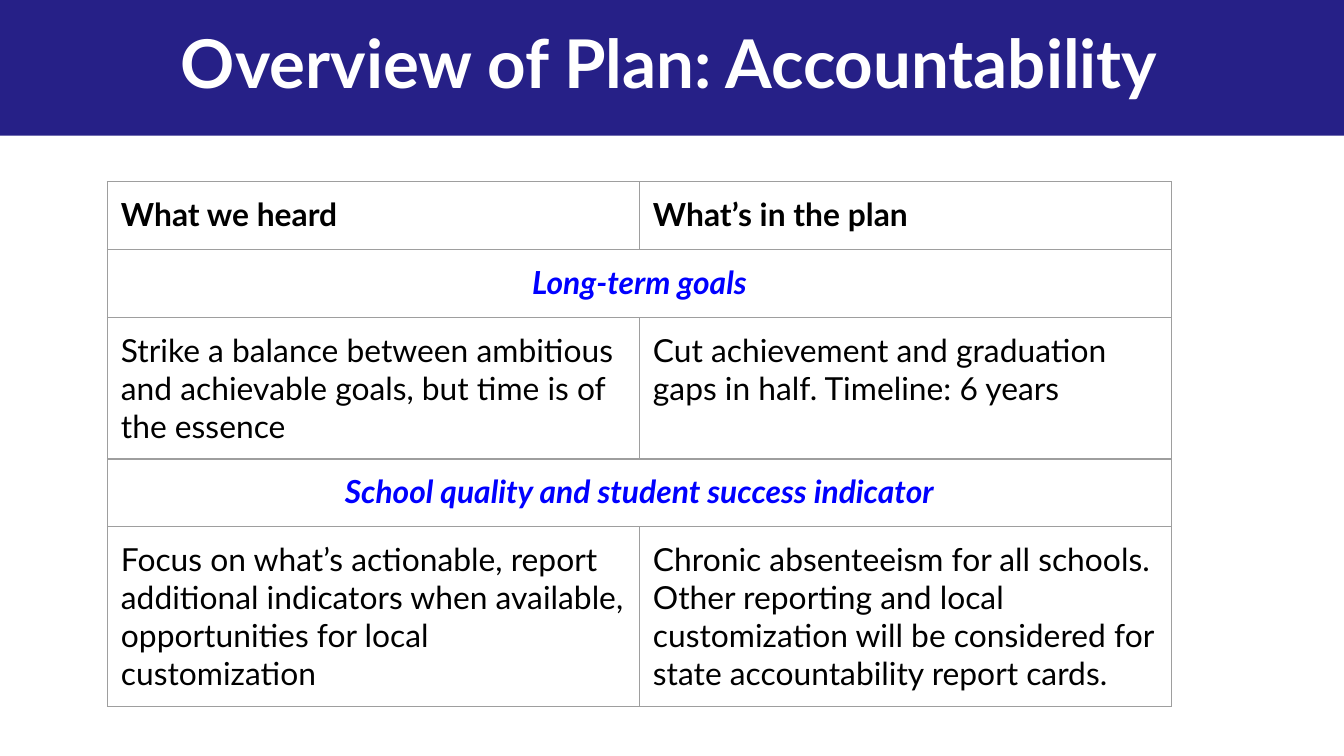
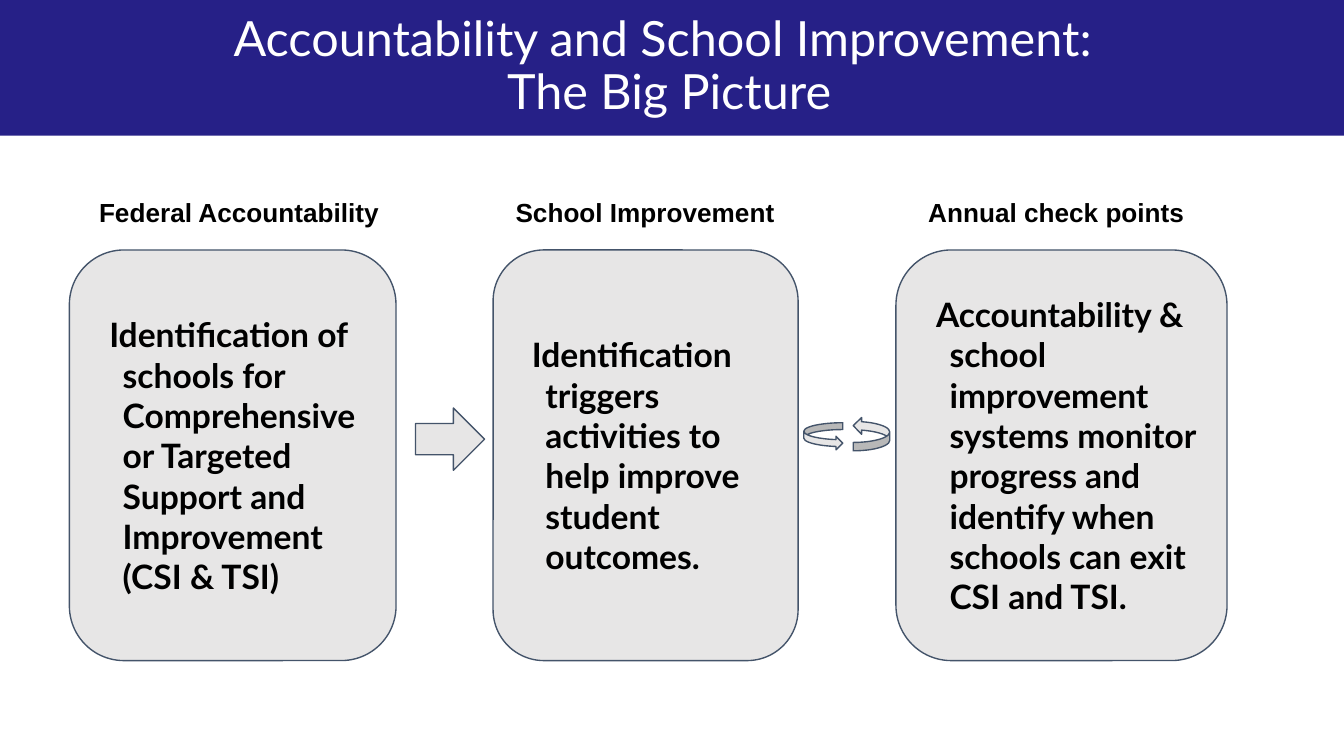
from dataclasses import dataclass

from lxml import etree
from pptx import Presentation
from pptx.dml.color import RGBColor
from pptx.enum.shapes import MSO_SHAPE
from pptx.enum.text import MSO_ANCHOR, PP_ALIGN
from pptx.oxml.ns import qn
from pptx.util import Pt

LEFT, MID = PP_ALIGN.LEFT, PP_ALIGN.CENTER
TOP, CORE = MSO_ANCHOR.TOP, MSO_ANCHOR.MIDDLE
RECT, ROUND = MSO_SHAPE.RECTANGLE, MSO_SHAPE.ROUNDED_RECTANGLE
RIGHT = MSO_SHAPE.RIGHT_ARROW
CURVE, BEND = MSO_SHAPE.CURVED_RIGHT_ARROW, MSO_SHAPE.CURVED_UP_ARROW
SIDES = ("left", "top", "right", "bottom")


@dataclass(frozen=True)
class Theme:
    band: str = "262087"
    white: str = "FFFFFF"
    ink: str = "000000"
    blue: str = "0000FF"
    grey: str = "E7E6E6"
    edge: str = "44546A"
    grid: str = "9E9E9E"
    face: str = "Lato"
    plain: str = "Arial"
    head: float = 36
    sub: float = 26
    card: float = 18
    cell: float = 17
    label: float = 14
    pad: float = 7.2
    rule: float = 0.75


def apply(item, vals):
    for key, val in vals.items():
        setattr(item, key, val)


class Deck:
    """Holds the theme and the current slide, and draws each kind of element."""

    def __init__(self, theme):
        self.theme = theme
        self.prs = Presentation()
        apply(self.prs, {"slide_width": Pt(720), "slide_height": Pt(405)})

    def start(self, lines, size, bold):
        self.slide = self.prs.slides.add_slide(self.prs.slide_layouts[6])
        self.shape(RECT, (-0.72, 0, 720.72, 72.72), self.theme.band)
        self.text((48.24, 0, 620.64, 72), lines, size, self.theme.white,
                  anchor=CORE, bold=bold, gap=0.9)

    def fill(self, frame, lines, size, color, face=None, align=MID,
             bold=True, italic=False, gap=None, hang=None):
        apply(frame, {f"margin_{side}": Pt(self.theme.pad) for side in SIDES})
        for num, line in enumerate(lines):
            par = frame.add_paragraph() if num else frame.paragraphs[0]
            apply(par, {"alignment": align, "line_spacing": gap})
            if hang:
                props = par._p.get_or_add_pPr()
                for key, val in zip(("marL", "indent"), hang):
                    props.set(key, str(Pt(val)))
            run = par.add_run()
            run.text = line
            apply(run.font, {"name": face or self.theme.face, "size": Pt(size),
                             "bold": bold, "italic": italic})
            run.font.color.rgb = RGBColor.from_string(color)

    def text(self, box, lines, size, color, anchor=TOP, **style):
        frame = self.slide.shapes.add_textbox(*map(Pt, box)).text_frame
        apply(frame, {"word_wrap": True, "vertical_anchor": anchor})
        self.fill(frame, lines, size, color, **style)

    def shape(self, kind, box, fill, edge=None, turn=0):
        item = self.slide.shapes.add_shape(kind, *map(Pt, box))
        item.shadow.inherit = False
        item.rotation = turn
        item.fill.solid()
        item.fill.fore_color.rgb = RGBColor.from_string(fill)
        if edge:
            item.line.color.rgb = RGBColor.from_string(edge)
            item.line.width = Pt(self.theme.rule)
        else:
            item.line.fill.background()
        return item

    def card(self, box, line):
        item = self.shape(ROUND, box, self.theme.grey, self.theme.edge)
        item.adjustments[0] = 0.167
        item.text_frame.vertical_anchor = CORE
        self.fill(item.text_frame, [line], self.theme.card, self.theme.ink,
                  align=LEFT, hang=(12.96, -7.2))

    def arrow(self, kind, box, turn=0):
        self.shape(kind, box, self.theme.grey, self.theme.edge, turn)

    def border(self, cell):
        props = cell._tc.get_or_add_tcPr()
        for side in "LRTB":
            line = etree.SubElement(props, qn(f"a:ln{side}"),
                                    w=str(Pt(self.theme.rule)))
            fill = etree.SubElement(line, qn("a:solidFill"))
            etree.SubElement(fill, qn("a:srgbClr"), val=self.theme.grid)
        cell.fill.background()

    def table(self, spot, width, rows):
        cols = 2
        high = sum(row[0] for row in rows)
        grid = self.slide.shapes.add_table(
            len(rows), cols, *map(Pt, (*spot, width * cols, high))).table
        apply(grid, {"first_row": False, "horz_banding": False})
        for col in grid.columns:
            col.width = Pt(width)
        for num, (tall, bold, *cells) in enumerate(rows):
            grid.rows[num].height = Pt(tall)
            for col in range(cols):
                self.border(grid.cell(num, col))
            wide = len(cells) == 1
            if wide:
                grid.cell(num, 0).merge(grid.cell(num, 1))
            for col, lines in enumerate(cells):
                cell = grid.cell(num, col)
                apply(cell, {f"margin_{side}": Pt(self.theme.pad)
                             for side in SIDES})
                self.fill(cell.text_frame, lines, self.theme.cell,
                          self.theme.blue if wide else self.theme.ink,
                          align=MID if wide else LEFT, bold=bold, italic=wide)


def plan(deck):
    deck.start(["Overview of Plan: Accountability"], deck.theme.head, True)
    deck.table((57.6, 97.4), 285, [
        (36.4, True, ["What we heard"], ["What’s in the plan"]),
        (36.4, True, ["Long-term goals"]),
        (56.2, False,
         ["Strike a balance between ambitious and achievable goals, "
          "but time is of the essence"],
         ["Cut achievement and graduation gaps in half. Timeline: 6 years"]),
        (36.4, True, ["School quality and student success indicator"]),
        (95, False,
         ["Focus on what’s actionable, report additional indicators when "
          "available, opportunities for local customization"],
         ["Chronic absenteeism for all schools.",
          "Other reporting and local customization will be considered for "
          "state accountability report cards."]),
    ])


def steps(deck):
    theme = deck.theme
    deck.start(["Accountability and School Improvement: ", "The Big Picture"],
               theme.sub, False)
    cards = [
        (37.2, 175, 44.6, 167, "Federal Accountability",
         "Identification of schools for Comprehensive or Targeted Support "
         "and Improvement (CSI & TSI)"),
        (264.2, 163.4, 268.6, 154, "School Improvement",
         "Identification triggers activities to help improve student "
         "outcomes."),
        (480, 177.4, 488.9, 154, "Annual check points",
         "Accountability & school improvement systems monitor progress and "
         "identify when schools can exit CSI and TSI."),
    ]
    for left, wide, start, span, label, line in cards:
        deck.card((left, 133.9, wide, 220), line)
        deck.text((start, 97.9, span, 36), [label], theme.label, theme.ink,
                  face=theme.plain)
    deck.arrow(RIGHT, (222.6, 218.6, 37, 33.4))
    deck.arrow(CURVE, (430.6, 226.5, 20.9, 14.6))
    deck.arrow(BEND, (457.9, 222.7, 18, 19.6), 270)


def main():
    deck = Deck(Theme())
    plan(deck)
    steps(deck)
    deck.prs.save("out.pptx")


if __name__ == "__main__":
    main()
